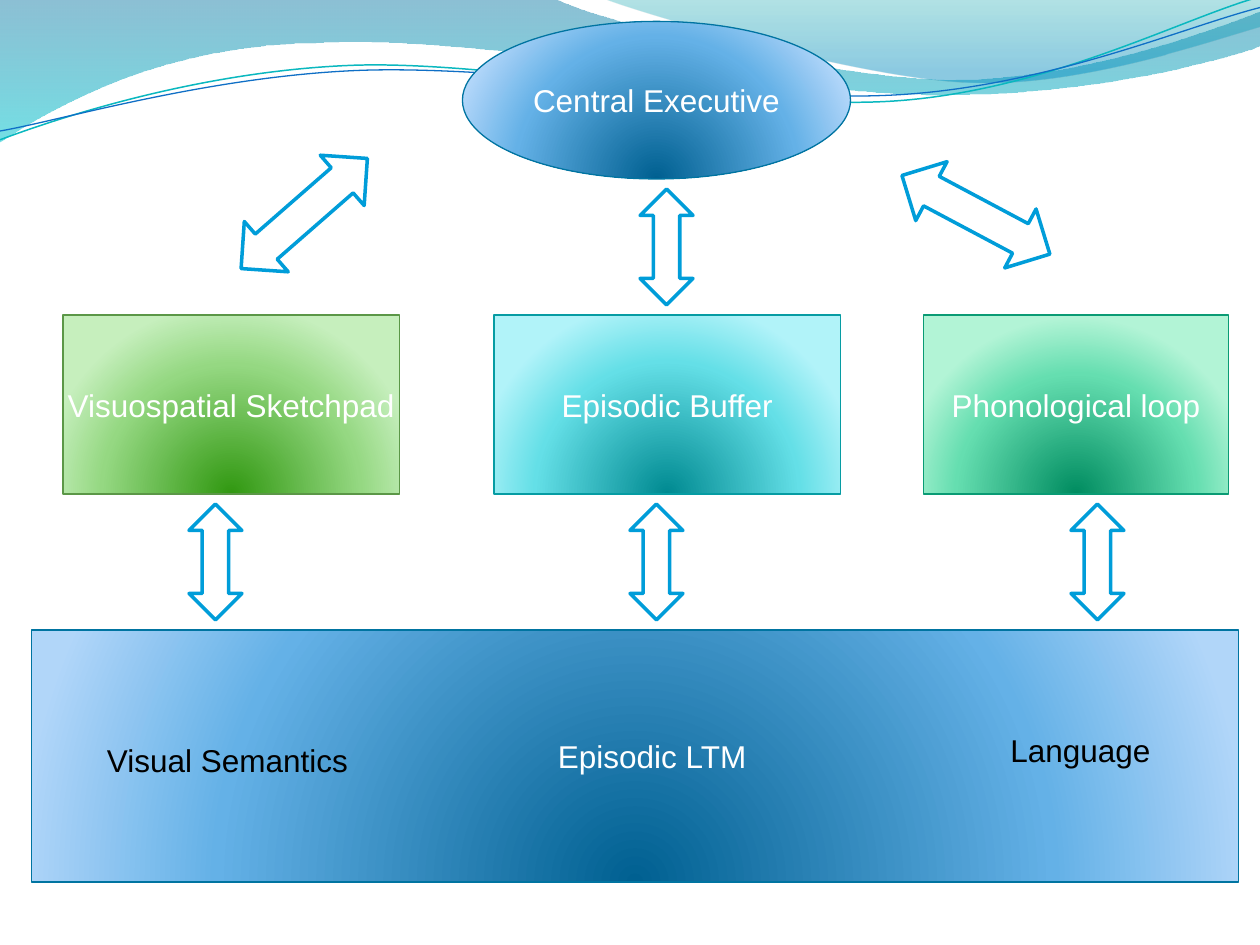
from collections import namedtuple

from lxml import etree
from pptx import Presentation
from pptx.dml.color import RGBColor
from pptx.enum.shapes import MSO_SHAPE
from pptx.enum.text import MSO_ANCHOR, PP_ALIGN
from pptx.oxml.ns import qn
from pptx.util import Inches, Pt

ELLIPSE, RECT, ARROW = MSO_SHAPE.OVAL, MSO_SHAPE.RECTANGLE, MSO_SHAPE.UP_DOWN_ARROW
MIDDLE, CENTER, LEFT = MSO_ANCHOR.MIDDLE, PP_ALIGN.CENTER, PP_ALIGN.LEFT

Box = namedtuple("Box", "left top width height")
Tone = namedtuple("Tone", "core middle edge line")

COLORS = {
    "white": "FFFFFF", "black": "000000", "arrow": "009DD9",
    "wave_blue": "0074A1", "wave_cyan": "00C6CF",
    "crest_teal": "00A1A9", "crest_blue": "008BBF",
    "thread_teal": "0AB8BF", "thread_blue": "0F6FC6",
}
TONES = {
    "blue": Tone("006091", "64B1E7", "B1D6F9", "0074A1"),
    "green": Tone("319811", "95D882", "C6EFBD", "5B9747"),
    "cyan": Tone("008A91", "64DFE7", "B1F3F9", "069CA3"),
    "mint": Tone("008C60", "65DEB0", "B2F4D6", "0A9B74"),
}
BANDS = [
    ([(0, -0.01), (4.4, -0.01), (4.76, 0.17, 6.64, 0.63, 7.58, 0.63),
      (8.53, 0.63, 9.58, 0.26, 10, 0.09), (10.01, 0.36),
      (9.83, 0.44, 8.7, 0.76, 7.46, 0.75), (6.22, 0.75, 3.82, 0.28, 2.57, 0.34),
      (1.29, 0.35, 0.46, 0.83, -0.01, 1.13), (0, -0.01)],
     [(0, COLORS["wave_blue"], 45), (100, COLORS["wave_cyan"], 55)]),
    ([(4.79, -0.01), (5.09, 0.11, 6.82, 0.62, 7.69, 0.65),
      (8.56, 0.69, 9.61, 0.32, 10, 0.21), (10, 0), (4.79, -0.01)],
     [(0, COLORS["crest_teal"], 30), (80, COLORS["crest_blue"], 45)]),
]
THREADS = [
    ([(0, 1.11), (0.48, 0.93, 1.58, 0.57, 2.77, 0.52),
      (3.95, 0.47, 5.93, 0.89, 7.13, 0.8), (8.33, 0.71, 9.38, 0.15, 9.98, -0.02)],
     "thread_teal", 0.85),
    ([(0, 1.04), (0.47, 0.96, 1.64, 0.61, 2.83, 0.56),
      (4.03, 0.51, 5.97, 0.83, 7.17, 0.75), (8.36, 0.67, 9.41, 0.21, 10, 0.06)],
     "thread_blue", 0.75),
]


def rgb(name):
    """Return the colour for a palette name or a hex string."""
    return RGBColor.from_string(COLORS.get(name, name))


def emu(values):
    """Convert a run of inch values to lengths."""
    return [Inches(value) for value in values]


def set_line(shape, color, width):
    """Give a shape a solid outline."""
    shape.line.color.rgb = rgb(color)
    shape.line.width = Pt(width)


def set_gradient(shape, stops, radial=False):
    """Fill a shape with (position, colour, opacity) stops, downward or radial."""
    shape.fill.background()
    blank = shape.element.spPr.find(qn("a:noFill"))
    gradient = etree.Element(qn("a:gradFill"), rotWithShape="1")
    stop_list = etree.SubElement(gradient, qn("a:gsLst"))
    for position, color, opacity in stops:
        stop = etree.SubElement(stop_list, qn("a:gs"), pos=str(position * 1000))
        tint = etree.SubElement(stop, qn("a:srgbClr"), val=color)
        if opacity < 100:
            etree.SubElement(tint, qn("a:alpha"), val=str(opacity * 1000))
    if radial:
        circle = etree.SubElement(gradient, qn("a:path"), path="circle")
        etree.SubElement(circle, qn("a:fillToRect"),
                         l="50000", t="130000", r="50000", b="-30000")
    else:
        etree.SubElement(gradient, qn("a:lin"), ang="5400000", scaled="1")
    blank.getparent().replace(blank, gradient)


def bend(shape, segments):
    """Merge each three lines that hold a curve's points into one cubic curve."""
    lines = iter(list(shape.element.spPr.iter(qn("a:lnTo"))))
    for segment in segments:
        parts = [next(lines) for _ in range(len(segment) // 2)]
        if len(parts) == 1:
            continue
        curve = etree.Element(qn("a:cubicBezTo"))
        parts[0].addprevious(curve)
        for part in parts:
            curve.append(part[0])
            part.getparent().remove(part)


def add_outline(slide, box, outline, close):
    """Draw an outline of lines and cubic curves relative to the box."""
    points = [emu((box.left + x, box.top + y)) for segment in outline
              for x, y in zip(segment[::2], segment[1::2])]
    builder = slide.shapes.build_freeform(*points[0])
    builder.add_line_segments(points[1:], close=close)
    shape = builder.convert_to_shape()
    bend(shape, outline[1:])
    shape.shadow.inherit = False
    return shape


def add_waves(slide, box):
    """Place the decorative bands and threads along the top."""
    for outline, stops in BANDS:
        band = add_outline(slide, box, outline, True)
        set_gradient(band, stops)
        band.line.fill.background()
    for outline, color, width in THREADS:
        thread = add_outline(slide, box, outline, False)
        thread.fill.background()
        set_line(thread, color, width)


def write(shape, label, color, align, **frame_format):
    """Set the label of a shape and the format of its text frame."""
    frame = shape.text_frame
    for name, value in frame_format.items():
        setattr(frame, name, value)
    paragraph = frame.paragraphs[0]
    paragraph.alignment = align
    run = paragraph.add_run()
    run.text = label
    for name, value in {"name": "Arial", "size": Pt(18)}.items():
        setattr(run.font, name, value)
    run.font.color.rgb = rgb(color)


def add_store(slide, box, preset, label, tone, **frame_format):
    """Place one labelled memory component with a radial glow."""
    store = slide.shapes.add_shape(preset, *emu(box))
    store.shadow.inherit = False
    set_gradient(store, [(0, tone.core, 100), (68, tone.middle, 100),
                         (100, tone.edge, 100)], radial=True)
    set_line(store, tone.line, 0.75)
    write(store, label, "white", CENTER, word_wrap=False,
          vertical_anchor=MIDDLE, **frame_format)


def add_arrow(slide, box, head=0.44, rotation=0):
    """Place one double-headed arrow."""
    arrow = slide.shapes.add_shape(ARROW, *emu(box))
    arrow.shadow.inherit = False
    arrow.rotation = rotation
    arrow.adjustments[0], arrow.adjustments[1] = head, 0.5
    arrow.fill.solid()
    arrow.fill.fore_color.rgb = rgb("white")
    set_line(arrow, "arrow", 2)


def add_buffers(slide, box):
    """Place the row of three subsidiary systems."""
    for offset, width, label, tone in (
        (0, 2.67, "Visuospatial Sketchpad", "green"),
        (3.42, 2.75, "Episodic Buffer", "cyan"),
        (6.83, 2.42, "Phonological loop", "mint"),
    ):
        add_store(slide, Box(box.left + offset, box.top, width, box.height),
                  RECT, label, TONES[tone])


def add_long_term_memory(slide, box):
    """Place the long-term memory panel with its three labels."""
    add_store(slide, box, RECT, "Episodic LTM", TONES["blue"], margin_left=Inches(0.37))
    for x, y, width, label, wraps in ((0.5, 0.83, 2.12, "Visual Semantics", False),
                                      (7.67, 0.75, 1.58, "Language", True)):
        caption = slide.shapes.add_textbox(
            *emu((box.left + x, box.top + y, width, 0.4)))
        write(caption, label, "black", LEFT, word_wrap=wraps)


def add_links(slide, box):
    """Place the arrows between the three levels."""
    for column in range(3):
        add_arrow(slide, Box(box.left + 3.5 * column, box.top + 2.5, 0.42, 0.92))
    for x, y, rotation in ((0.65, -0.47, 48.9), (5.98, -0.46, 118)):
        add_arrow(slide, Box(box.left + x, box.top + y, 0.53, 1.33), 0.5, rotation)
    add_arrow(slide, Box(box.left + 3.58, box.top, 0.42, 0.92))


def main():
    """Build the working memory slide."""
    deck = Presentation()
    deck.slide_width, deck.slide_height = Inches(10), Inches(7.5)
    slide = deck.slides.add_slide(deck.slide_layouts[6])
    add_waves(slide, Box(0, 0, 10, 1.14))
    add_store(slide, Box(3.67, 0.17, 3.08, 1.25), ELLIPSE,
              "Central Executive", TONES["blue"])
    add_buffers(slide, Box(0.5, 2.5, 9.25, 1.42))
    add_long_term_memory(slide, Box(0.25, 5, 9.58, 2))
    add_links(slide, Box(1.5, 1.5, 7.42, 3.42))
    deck.save("out.pptx")


if __name__ == "__main__":
    main()
